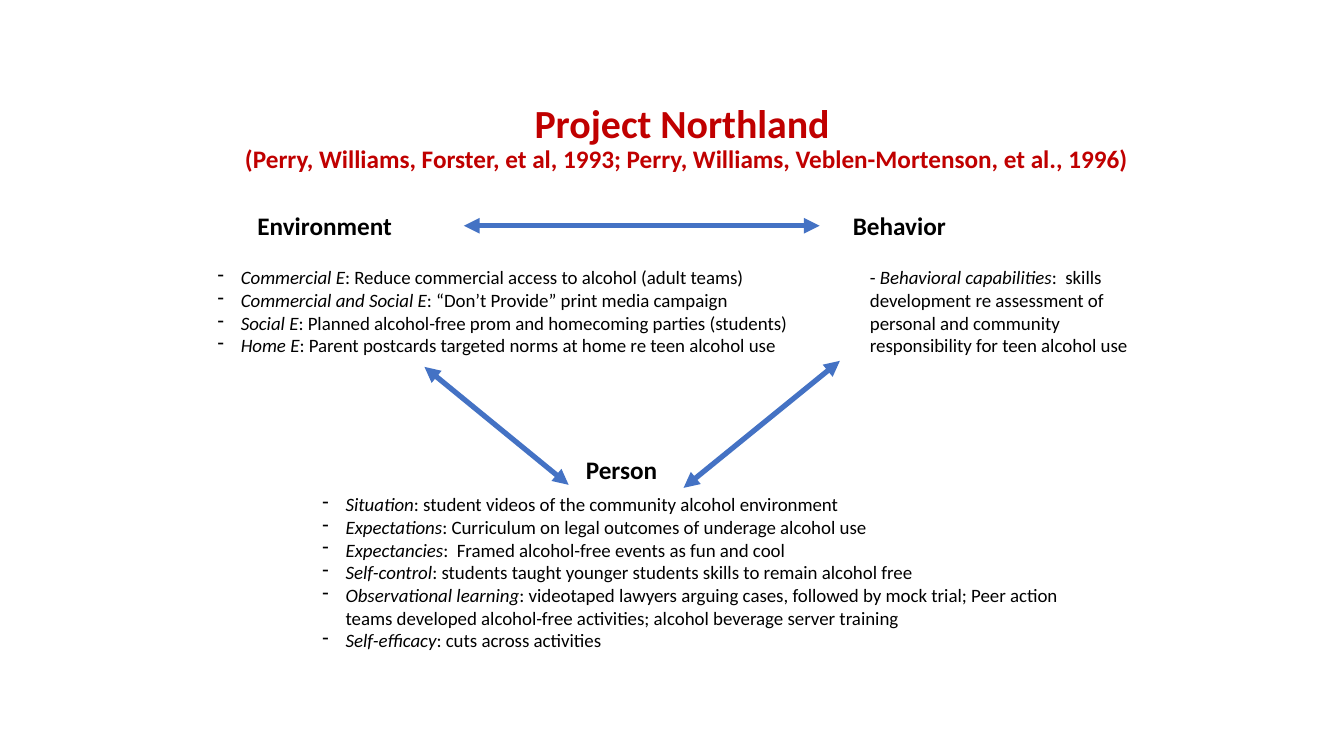
from dataclasses import dataclass

from lxml import etree
from pptx import Presentation
from pptx.dml.color import RGBColor
from pptx.enum.text import MSO_ANCHOR, PP_ALIGN
from pptx.oxml.ns import qn
from pptx.util import Inches, Pt

CENTER, LEFT = PP_ALIGN.CENTER, PP_ALIGN.LEFT
TOP, MIDDLE = MSO_ANCHOR.TOP, MSO_ANCHOR.MIDDLE
BLANK_LAYOUT = 6


@dataclass(frozen=True)
class Theme:
    font: str = "Calibri"
    title_color: RGBColor = RGBColor(0xC0, 0x00, 0x00)
    text_color: RGBColor = RGBColor(0x00, 0x00, 0x00)
    arrow_color: RGBColor = RGBColor(0x44, 0x72, 0xC4)
    title_size: float = 28.5
    heading_size: float = 18
    body_size: float = 13.5
    arrow_width: float = 3.75


THEME = Theme()

# Content
TITLE = "Project Northland "
CITATION = "(Perry, Williams, Forster, et al, 1993; Perry, Williams, Veblen-Mortenson, et al., 1996)"
ENVIRONMENT = [
    ("Commercial E", ": Reduce commercial access to alcohol (adult teams)"),
    ("Commercial and Social E", ": “Don’t Provide” print media campaign"),
    ("Social E", ": Planned alcohol-free prom and homecoming parties (students)"),
    ("Home E", ": Parent postcards targeted norms at home re teen alcohol use"),
]
PERSON = [
    ("Situation", ": student videos of the community alcohol environment"),
    ("Expectations", ": Curriculum on legal outcomes of underage alcohol use"),
    ("Expectancies", ":  Framed alcohol-free events as fun and cool"),
    ("Self-control", ": students taught younger students skills to remain alcohol free"),
    ("Observational learning", ": videotaped lawyers arguing cases, followed by mock trial; "
     "Peer action teams developed alcohol-free activities; alcohol beverage server training"),
    ("Self-efficacy", ": cuts across activities"),
]
BEHAVIOR = ("Behavioral capabilities",
            ":  skills development re assessment of personal and community "
            "responsibility for teen alcohol use")

# Layout in inches: left, top, width, height
SLIDE_SIZE = (13.33, 7.5)
HEADING_TOP, LIST_TOP, PERSON_TOP = 2.04, 2.59, 4.46
HEADING_HEIGHT, LIST_HEIGHT = 0.4, 1.01
INDENT = 0.23
TITLE_AREA = (1.87, 0.94, 9.88, 0.88)
HEADINGS = [
    ("Environment", (2.45, HEADING_TOP, 1.54, HEADING_HEIGHT)),
    ("Behavior", (7, HEADING_TOP, 3.84, HEADING_HEIGHT)),
    ("Person", (3.5, PERSON_TOP, 5.33, HEADING_HEIGHT)),
]
LISTS = [
    (ENVIRONMENT, (2.06, LIST_TOP, 5.95, LIST_HEIGHT)),
    (PERSON, (3.1, 4.84, 7.67, 2.15)),
]
BEHAVIOR_AREA = (8.53, LIST_TOP, 3.03, LIST_HEIGHT)
ARROWS = [
    (4.6, 2.24, 8.13, 2.24),   # environment and behavior
    (4.21, 3.64, 5.64, 4.81),  # environment and person
    (6.78, 4.84, 8.33, 3.58),  # person and behavior
]


def add_box(page, area, anchor=TOP):
    frame = page.shapes.add_textbox(*map(Inches, area)).text_frame
    frame.word_wrap = True
    frame.vertical_anchor = anchor
    return frame


def style(span, size, color=THEME.text_color, bold=False, italic=False):
    span.font.name = THEME.font
    span.font.size = Pt(size)
    span.font.color.rgb = color
    span.font.bold = bold
    span.font.italic = italic


def add_span(para, text, italic=False):
    span = para.add_run()
    span.text = text
    style(span, THEME.body_size, italic=italic)


def add_term(para, term, detail):
    add_span(para, term, italic=True)
    add_span(para, detail)


def add_dash(para):
    properties = para._p.get_or_add_pPr()
    properties.set("marL", str(Inches(INDENT)))
    properties.set("indent", str(-Inches(INDENT)))
    etree.SubElement(properties, qn("a:buChar"), char="-")


def add_title(page):
    para = add_box(page, TITLE_AREA, MIDDLE).paragraphs[0]
    para.text = TITLE + "\v" + CITATION
    para.alignment = CENTER
    para.line_spacing = 0.9
    for span, size in zip(para.runs, (THEME.title_size, THEME.heading_size)):
        style(span, size, THEME.title_color, bold=True)


def add_heading(page, text, area):
    para = add_box(page, area).paragraphs[0]
    para.text = text
    para.alignment = CENTER
    style(para.runs[0], THEME.heading_size, bold=True)


def add_list(page, items, area):
    frame = add_box(page, area)
    for index, (term, detail) in enumerate(items):
        para = frame.add_paragraph() if index else frame.paragraphs[0]
        para.alignment = LEFT
        add_dash(para)
        add_term(para, term, detail)


def add_arrow(page, ends):
    arrow = page.shapes.add_connector(1, *map(Inches, ends))
    arrow.line.color.rgb = THEME.arrow_color
    arrow.line.width = Pt(THEME.arrow_width)
    line = arrow.line._get_or_add_ln()
    for end in ("a:headEnd", "a:tailEnd"):
        etree.SubElement(line, qn(end), type="triangle")
    etree.SubElement(arrow._element.spPr, qn("a:effectLst"))


def main():
    deck = Presentation()
    deck.slide_width, deck.slide_height = map(Inches, SLIDE_SIZE)
    page = deck.slides.add_slide(deck.slide_layouts[BLANK_LAYOUT])

    # Title and headings
    add_title(page)
    for text, area in HEADINGS:
        add_heading(page, text, area)

    # Arrows of the triangle
    for ends in ARROWS:
        add_arrow(page, ends)

    # Details under each heading
    for items, area in LISTS:
        add_list(page, items, area)
    para = add_box(page, BEHAVIOR_AREA).paragraphs[0]
    add_span(para, "- ")
    add_term(para, *BEHAVIOR)

    deck.save("out.pptx")


if __name__ == "__main__":
    main()
